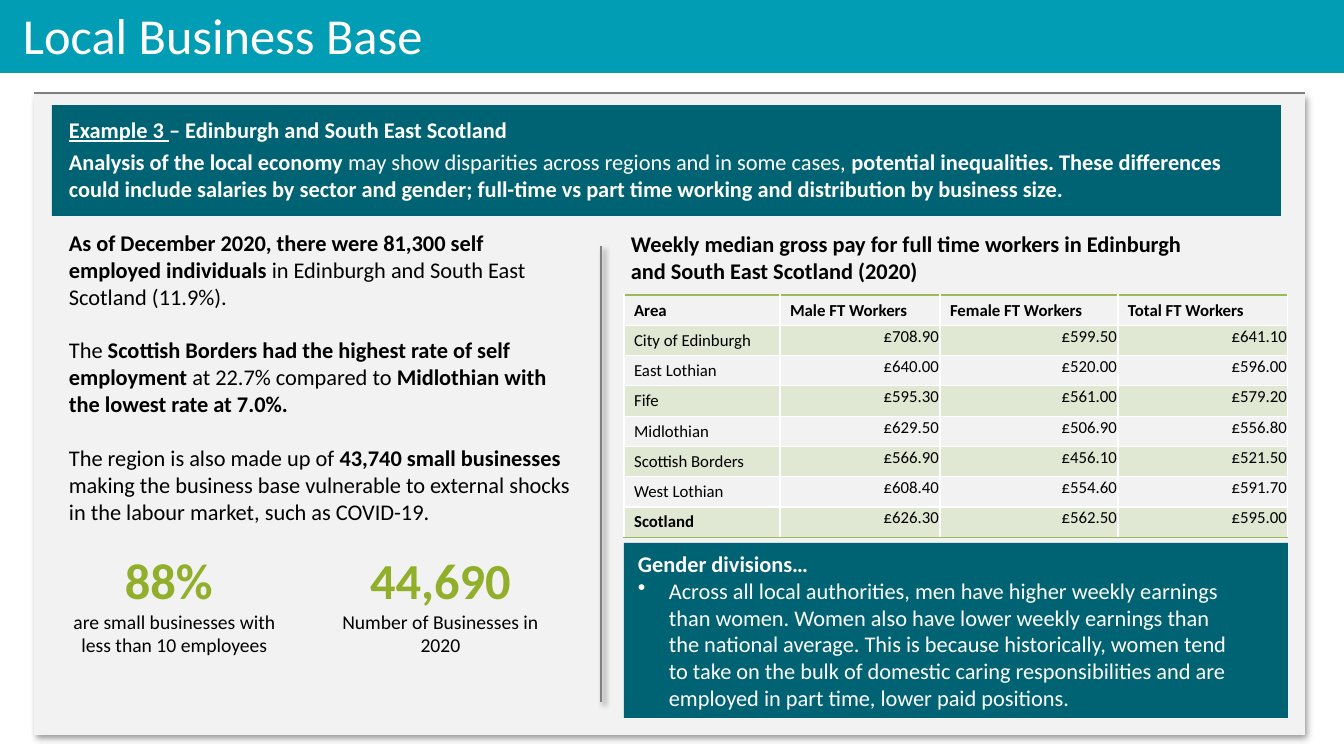
from lxml import etree
from pptx import Presentation, util as u
from pptx.dml.color import RGBColor
from pptx.enum import shapes, text
from pptx.oxml import ns

HUES = {"bar": "009DB5", "deep": "006373", "panel": "F2F2F2", "rule": "808080",
        "lime": "92AF2B", "band": "9BBB59", "ink": "000000", "white": "FFFFFF"}
FACE = "Calibri"
PX = 914400 / 100.8
A = "http://schemas.openxmlformats.org/drawingml/2006/main"

BOXES = [
    ((34, 95, 1271, 640), "panel", True),
    ((52, 105, 1229, 111), "deep", False),
    ((0, -5, 1344, 78), "bar", False),
    ((624, 543, 664, 175), "deep", False),
]
RULES = [((34, 93), (1305, 93), False), ((601, 246), (601, 702), True)]

# Each paragraph: wording with *bold* marks, size, colour, space before in points
TEXTS = [
    ((13, -1, 445, 72), "l", [("Local Business Base", 36, "white", 0)]),
    ((59, 111, 1176, 97), "l", [
        ("*_Example 3 _– Edinburgh and South East Scotland*", 16, "white", 0),
        ("*Analysis of the local economy *may show disparities across regions and in some cases, "
         "*potential inequalities. These differences could include salaries by sector and gender; "
         "full-time vs part time working and distribution by business size.*", 16, "white", 3.7)]),
    ((59, 224, 525, 308), "l", [
        ("*As of December 2020, there were 81,300 self employed individuals *"
         "in Edinburgh and South East Scotland (11.9%).", 16, "ink", 0),
        ("The *Scottish Borders had the highest rate of self employment *at 22.7% compared to "
         "*Midlothian with the lowest rate at 7.0%.*", 16, "ink", 19.3),
        ("The region is also made up of *43,740 small businesses *making the business base "
         "vulnerable to external shocks in the labour market, such as COVID-19.", 16, "ink", 19.3)]),
    ((56, 544, 237, 119), "c", [
        ("*88% *", 36, "lime", 0),
        ("are small businesses with less than 10 employees", 14, "ink", 0)]),
    ((322, 544, 237, 119), "c", [
        ("*44,690*", 36, "lime", 0),
        ("Number of Businesses in 2020", 14, "ink", 0)]),
    ((621, 225, 603, 65), "l", [
        ("*Weekly median gross pay for full time workers in Edinburgh "
         "and South East Scotland (2020)*", 16, "ink", 0)]),
    ((628, 545, 614, 173), "l", [
        ("*Gender divisions…*", 16, "white", 0),
        ("•Across all local authorities, men have higher weekly earnings than women. Women also "
         "have lower weekly earnings than the national average. This is because historically, "
         "women tend to take on the bulk of domestic caring responsibilities and are employed in "
         "part time, lower paid positions.", 16, "white", 0)]),
]

HEADS = ["Area", "Male FT Workers", "Female FT Workers", "Total FT Workers"]
PAY = [
    ("City of Edinburgh", 708.9, 599.5, 641.1),
    ("East Lothian", 640, 520, 596),
    ("Fife", 595.3, 561, 579.2),
    ("Midlothian", 629.5, 506.9, 556.8),
    ("Scottish Borders", 566.9, 456.1, 521.5),
    ("West Lothian", 608.4, 554.6, 591.7),
    ("Scotland", 626.3, 562.5, 595),
]
COLS = [156, 160, 178, 170]
GRID = (624, 295)
ROW = 30


def px(n):
    return u.Emu(round(n * PX))


def hue(key):
    return RGBColor.from_string(HUES[key])


def node(xml):
    return etree.fromstring(xml.replace(">", f' xmlns:a="{A}">', 1))


def effect(shape, cast):
    glow = ('<a:outerShdw blurRad="50800" dist="38100" dir="2700000" algn="tl" rotWithShape="0">'
            '<a:srgbClr val="000000"><a:alpha val="40000"/></a:srgbClr></a:outerShdw>')
    spot = shape._element.spPr
    spot.append(node(f"<a:effectLst>{glow if cast else ''}</a:effectLst>"))


def style(para, size, key):
    para.font.name, para.font.size = FACE, u.Pt(size)
    para.font.color.rgb = hue(key)


def write(para, line):
    if line.startswith("•"):
        line = line[1:]
        props = para._p.get_or_add_pPr()
        props.set("marL", str(px(31)))
        props.set("indent", str(-px(31)))
        props.insert_element_before(node('<a:buChar char="•"></a:buChar>'), "a:tabLst", "a:defRPr")
    parts = line.split("*")
    mixed = sum(map(bool, parts)) > 1
    if not mixed:
        para.font.bold = len(parts) > 1
    for i, part in enumerate(parts):
        for j, bit in enumerate(part.split("_")):
            if bit:
                run = para.add_run()
                run.text = bit
                if mixed:
                    run.font.bold = i % 2 == 1
                if j % 2:
                    run.font.underline = True


def edge(cell, side):
    line = node(f'<a:{side} w="12700"><a:solidFill><a:srgbClr val="{HUES["band"]}"/>'
                f'</a:solidFill></a:{side}>')
    props = cell._tc.get_or_add_tcPr()
    props.insert(len(props.findall(ns.qn("a:lnT"))), line)


def table(slide):
    rows = [HEADS] + PAY
    frame = slide.shapes.add_table(len(rows), len(COLS), px(GRID[0]), px(GRID[1]),
                                   px(sum(COLS)), px(ROW * len(rows)))
    grid = frame.table
    grid.first_row = grid.horz_banding = False
    for col, wide in zip(grid.columns, COLS):
        col.width = px(wide)
    for r, row in enumerate(rows):
        grid.rows[r].height = px(ROW)
        for c, value in enumerate(row):
            cell = grid.cell(r, c)
            para = cell.text_frame.paragraphs[0]
            style(para, 12, "ink")
            para.font.bold = r == 0 or value == "Scotland"
            para.add_run().text = value if isinstance(value, str) else f"£{value:.2f}"
            if r and c:
                para.alignment = text.PP_ALIGN.RIGHT
                cell.margin_left = cell.margin_right = cell.margin_top = px(1)
                cell.margin_bottom = 0
            if r % 2:
                cell.fill.solid()
                cell.fill.fore_color.rgb = hue("band")
                tint = cell._tc.tcPr.find(".//" + ns.qn("a:srgbClr"))
                tint.append(node('<a:alpha val="20000"></a:alpha>'))
            else:
                cell.fill.background()
            if r == 0:
                edge(cell, "lnT")
            if r in (0, len(rows) - 1):
                edge(cell, "lnB")


def main():
    deck = Presentation()
    deck.slide_width, deck.slide_height = px(1344), px(756)
    slide = deck.slides.add_slide(deck.slide_layouts[6])
    for spot, key, cast in BOXES:
        box = slide.shapes.add_shape(shapes.MSO_SHAPE.RECTANGLE, *map(px, spot))
        box.fill.solid()
        box.fill.fore_color.rgb = hue(key)
        box.line.fill.background()
        if cast:
            effect(box, True)
        else:
            box.shadow.inherit = False
    for start, end, cast in RULES:
        rule = slide.shapes.add_connector(shapes.MSO_CONNECTOR.STRAIGHT, *map(px, start + end))
        rule.line.color.rgb = hue("rule")
        rule.line.width = u.Pt(1.5)
        effect(rule, cast)
    for spot, side, lines in TEXTS:
        frame = slide.shapes.add_textbox(*map(px, spot)).text_frame
        frame.word_wrap = True
        for i, (line, size, key, gap) in enumerate(lines):
            para = frame.add_paragraph() if i else frame.paragraphs[0]
            para.alignment = text.PP_ALIGN.CENTER if side == "c" else text.PP_ALIGN.LEFT
            para.space_before = u.Pt(gap)
            style(para, size, key)
            write(para, line)
    table(slide)
    deck.save("out.pptx")


if __name__ == "__main__":
    main()
